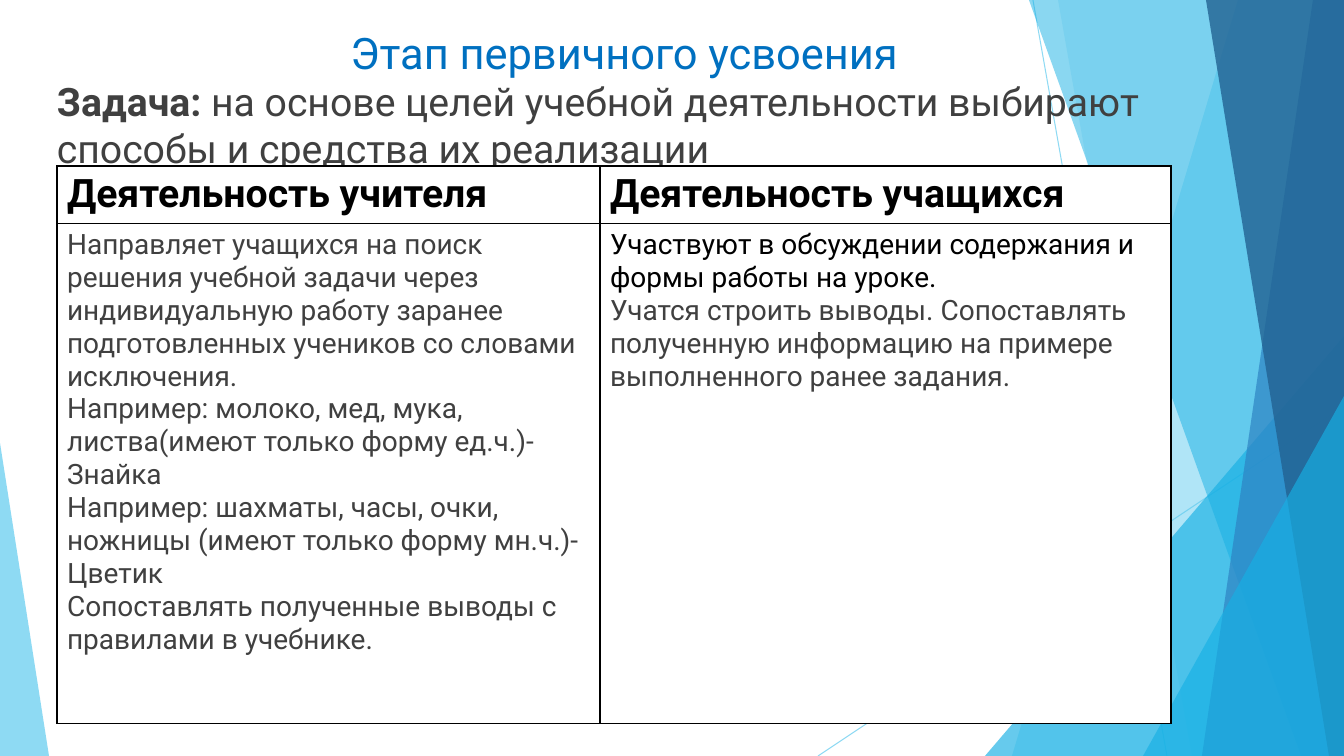
from lxml import etree
from pptx import Presentation
from pptx.dml.color import RGBColor
from pptx.enum import shapes, text
from pptx.oxml import ns
from pptx.util import Emu, Pt

WIDTH, HEIGHT = 1344, 756
SCALE = 914400 / 100.8
FONT = "Roboto"

SKY = RGBColor(0x5F, 0xCB, 0xEF)
CYAN = RGBColor(0x17, 0xB0, 0xE4)
BLUE = RGBColor(0x2E, 0x83, 0xC3)
NAVY = RGBColor(0x22, 0x62, 0x92)
TITLE_BLUE = RGBColor(0x00, 0x70, 0xC0)
GREY = RGBColor(0x40, 0x40, 0x40)
BLACK = RGBColor(0, 0, 0)
WHITE = RGBColor(0xFF, 0xFF, 0xFF)

TITLE = "Этап первичного усвоения"
TASK = [
    ("Задача: ", True),
    ("на основе целей учебной деятельности выбирают способы и средства их реализации", False),
]

# Table: each cell is a list of (paragraph, colour)
HEADINGS = [[("Деятельность учителя", BLACK)], [("Деятельность учащихся", BLACK)]]
ACTIVITIES = [
    [
        ("Направляет учащихся на поиск решения учебной задачи через индивидуальную "
         "работу заранее подготовленных учеников со словами исключения.", GREY),
        ("Например: молоко, мед, мука, листва(имеют только форму ед.ч.)- Знайка", GREY),
        ("Например: шахматы, часы, очки, ножницы (имеют только форму мн.ч.)- Цветик", GREY),
        ("Сопоставлять полученные выводы с правилами в учебнике.", GREY),
    ],
    [
        ("Участвуют в обсуждении содержания и формы работы на уроке.", BLACK),
        ("Учатся строить выводы. Сопоставлять полученную информацию на примере "
         "выполненного ранее задания.", GREY),
    ],
]
TABLE_ROWS = [(HEADINGS, 28, True), (ACTIVITIES, 20, False)]
TABLE_LEFT, TABLE_TOP = 57, 166
COLUMN_WIDTHS = [543, 571]
ROW_HEIGHTS = [56, 500]

# Background: lines as (start, end)
RAYS = [((1033, 0), (1167, HEIGHT)), ((WIDTH, 406), (818, HEIGHT))]
# Bands reach the right edge: (x at top, x at bottom, colour, opacity %)
# Triangles: (left, top, width, apex position, colour, opacity %)
FACETS = [
    ("band", (1238, 1012, SKY, 36)),
    ("band", (1058, 1192, SKY, 20)),
    ("triangle", (985, 336, 359, 1, CYAN, 66)),
    ("band", (1029, 1301, CYAN, 50)),
    ("band", (1313, 1202, BLUE, 70)),
    ("band", (1206, 1329, NAVY, 80)),
    ("triangle", (1143, 396, 201, 1, CYAN, 66)),
    ("triangle", (0, 443, 49, 0, SKY, 70)),
]


def px(length):
    return Emu(round(length * SCALE))


def set_opacity(element, percent):
    colour = element.find(".//" + ns.qn("a:srgbClr"))
    etree.SubElement(colour, ns.qn("a:alpha"), val=str(percent * 1000))


def paint(shape, colour, opacity):
    shape.shadow.inherit = False
    shape.fill.solid()
    shape.fill.fore_color.rgb = colour
    shape.line.fill.background()
    set_opacity(shape._element.spPr.find(ns.qn("a:solidFill")), opacity)


def add_ray(slide, start, end):
    ray = slide.shapes.add_connector(
        shapes.MSO_CONNECTOR.STRAIGHT, *map(px, start + end))
    ray.line.color.rgb = SKY
    ray.line.width = Pt(0.75)
    properties = ray._element.spPr
    set_opacity(properties.find(ns.qn("a:ln")), 70)
    etree.SubElement(properties, ns.qn("a:effectLst"))


def add_band(slide, top_x, bottom_x, colour, opacity):
    builder = slide.shapes.build_freeform(top_x, 0, scale=SCALE)
    builder.add_line_segments([(WIDTH, 0), (WIDTH, HEIGHT), (bottom_x, HEIGHT)], close=True)
    paint(builder.convert_to_shape(), colour, opacity)


def add_triangle(slide, left, top, width, apex, colour, opacity):
    triangle = slide.shapes.add_shape(
        shapes.MSO_SHAPE.ISOSCELES_TRIANGLE,
        px(left), px(top), px(width), px(HEIGHT - top))
    triangle.adjustments[0] = apex
    paint(triangle, colour, opacity)


def format_run(run, size, colour, bold=False):
    run.font.name = FONT
    run.font.size = Pt(size)
    run.font.color.rgb = colour
    run.font.bold = bold


def add_text(slide, left, top, width, height, runs, size, colour, alignment):
    frame = slide.shapes.add_textbox(px(left), px(top), px(width), px(height)).text_frame
    frame.word_wrap = True
    frame.margin_top = px(7)
    paragraph = frame.paragraphs[0]
    paragraph.alignment = alignment
    for content, bold in runs:
        run = paragraph.add_run()
        run.text = content
        format_run(run, size, colour, bold)


def add_borders(cell):
    properties = cell._tc.get_or_add_tcPr()
    for index, side in enumerate(("lnL", "lnR", "lnT", "lnB")):
        border = etree.Element(ns.qn("a:" + side), w=str(Pt(1)))
        fill = etree.SubElement(border, ns.qn("a:solidFill"))
        etree.SubElement(fill, ns.qn("a:srgbClr"), val=str(BLACK))
        properties.insert(index, border)


def fill_cell(cell, paragraphs, size, bold):
    cell.fill.solid()
    cell.fill.fore_color.rgb = WHITE
    add_borders(cell)
    cell.text_frame.text = "\n".join(content for content, _ in paragraphs)
    for paragraph, (_, colour) in zip(cell.text_frame.paragraphs, paragraphs):
        format_run(paragraph.runs[0], size, colour, bold)


def add_activity_table(slide):
    table = slide.shapes.add_table(
        len(ROW_HEIGHTS), len(COLUMN_WIDTHS), px(TABLE_LEFT), px(TABLE_TOP),
        px(sum(COLUMN_WIDTHS)), px(sum(ROW_HEIGHTS))).table
    table.horz_banding = False
    for column, width in zip(table.columns, COLUMN_WIDTHS):
        column.width = px(width)
    for row, height, (cells, size, bold) in zip(table.rows, ROW_HEIGHTS, TABLE_ROWS):
        row.height = px(height)
        for cell, paragraphs in zip(row.cells, cells):
            fill_cell(cell, paragraphs, size, bold)


def main():
    presentation = Presentation()
    presentation.slide_width, presentation.slide_height = px(WIDTH), px(HEIGHT)
    slide = presentation.slides.add_slide(presentation.slide_layouts[6])

    # Background facets
    for start, end in RAYS:
        add_ray(slide, start, end)
    builders = {"band": add_band, "triangle": add_triangle}
    for kind, values in FACETS:
        builders[kind](slide, *values)

    # Title and task
    add_text(slide, 83, 19, 1082, 71, [(TITLE, False)], 31, TITLE_BLUE, text.PP_ALIGN.CENTER)
    add_text(slide, 47, 70, 1123, 600, TASK, 28, GREY, text.PP_ALIGN.LEFT)

    # Activities of teacher and pupils
    add_activity_table(slide)
    presentation.save("out.pptx")


if __name__ == "__main__":
    main()
